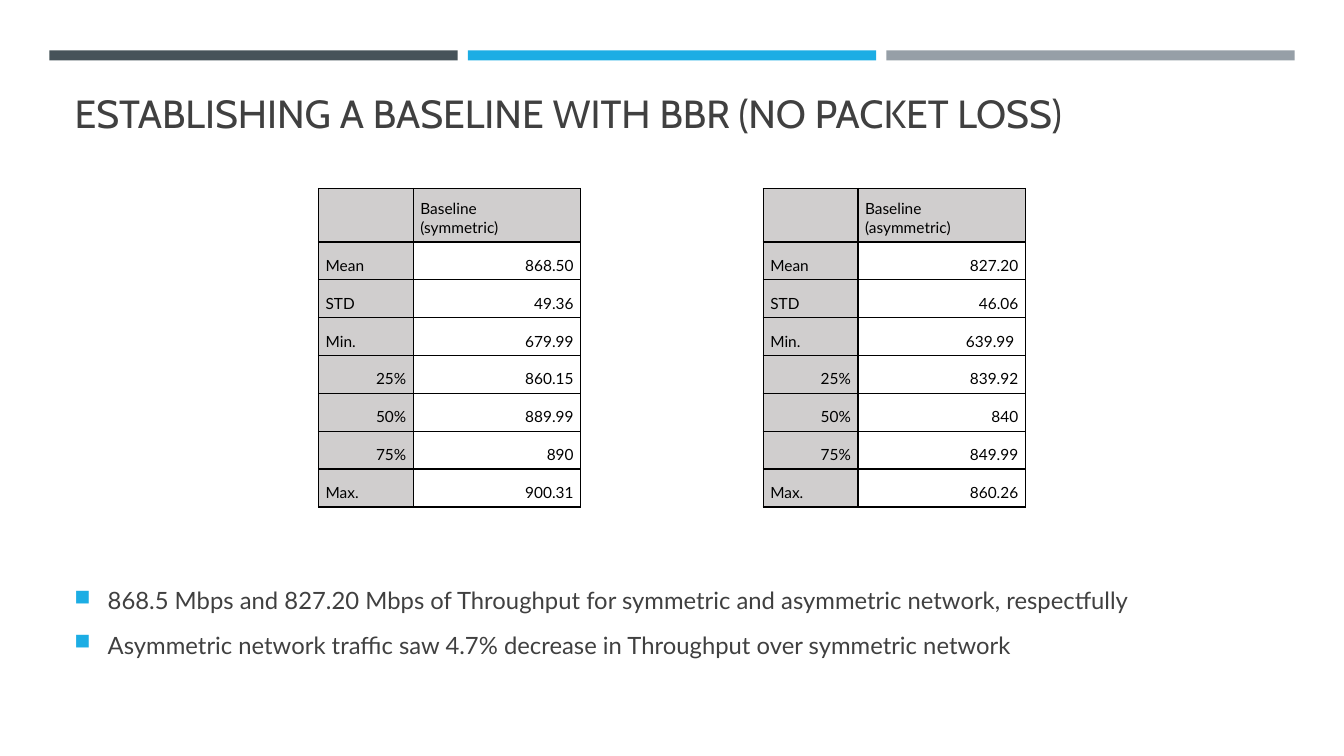
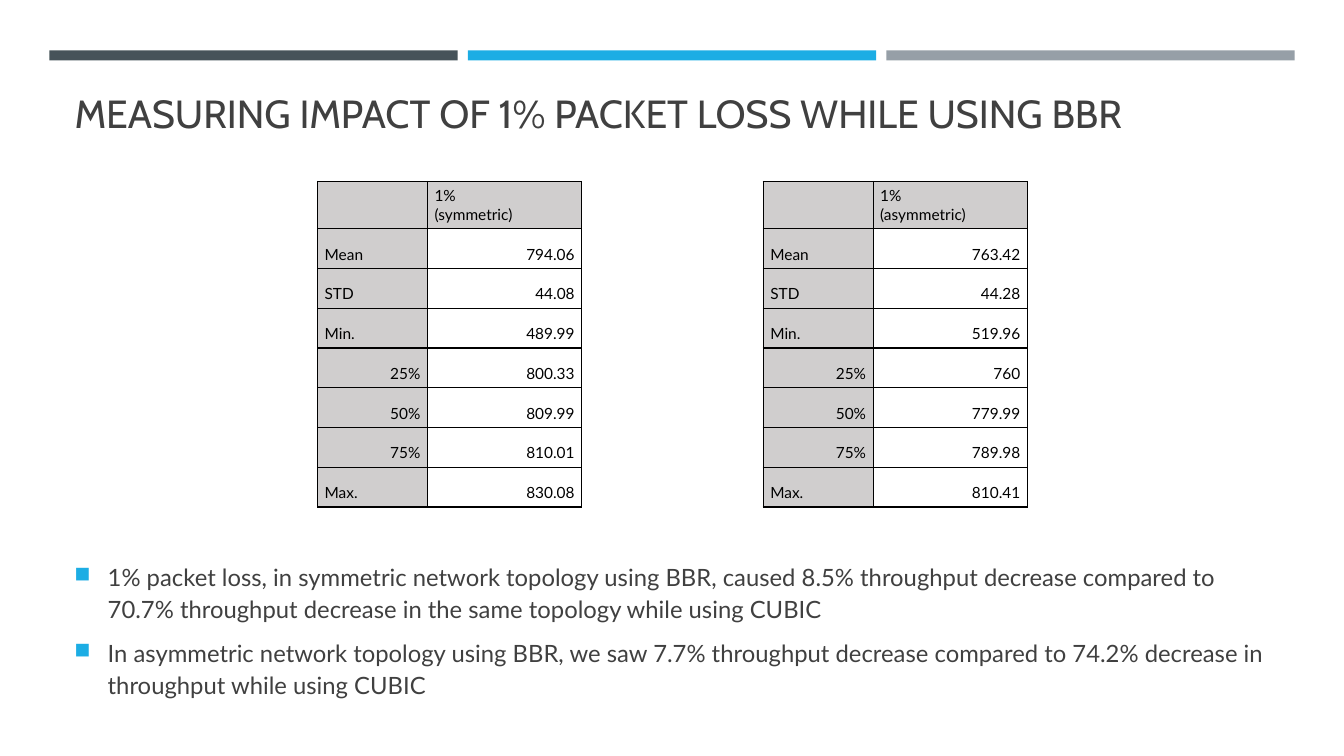
from dataclasses import dataclass
from typing import Any

from lxml import etree
from pptx import Presentation
from pptx.dml.color import RGBColor
from pptx.enum.shapes import MSO_SHAPE
from pptx.enum.text import MSO_ANCHOR, MSO_AUTO_SIZE, PP_ALIGN
from pptx.oxml.ns import qn
from pptx.slide import Slide
from pptx.util import Inches, Pt

RECTANGLE = MSO_SHAPE.RECTANGLE
BOTTOM, MIDDLE = MSO_ANCHOR.BOTTOM, MSO_ANCHOR.MIDDLE
LEFT, RIGHT = PP_ALIGN.LEFT, PP_ALIGN.RIGHT
NO_FIT = MSO_AUTO_SIZE.NONE

COLORS = {
    "slate": "465359",
    "blue": "1CADE4",
    "gray": "969FA7",
    "text": "404040",
    "label": "D0CECE",
    "white": "FFFFFF",
    "black": "000000",
}

# Shared formats
TITLE_FONT = {"name": "Cabin", "size": Pt(28), "bold": False}
BODY_FONT = {"name": "Lato", "size": Pt(17)}
CELL_FONT = {"name": "Lato", "size": Pt(11), "bold": False}
TITLE_FRAME = {"vertical_anchor": BOTTOM, "word_wrap": True, "auto_size": NO_FIT}
BODY_FRAME = {"vertical_anchor": MIDDLE, "word_wrap": True, "auto_size": NO_FIT}
BODY_PARAGRAPH = {"line_spacing": 1.1, "space_before": Pt(3.4), "space_after": Pt(6)}
CELL_FORMAT = {
    "vertical_anchor": BOTTOM,
    "margin_left": Inches(0.07),
    "margin_right": Inches(0.07),
    "margin_top": Inches(0.05),
    "margin_bottom": Inches(0.05),
}
PLAIN_TABLE = {"first_row": False, "horz_banding": False}

# Shared positions, in inches
TEXT_LEFT, TEXT_WIDTH = 0.64, 12.06
BAND_LEFT, BAND_TOP, BAND_WIDTH, BAND_HEIGHT, BAND_GAP = 0.49, 0.5, 4.05, 0.1, 0.1
BANDS = ("slate", "blue", "gray")
ROW_LABELS = ("Mean", "STD", "Min.", "25%", "50%", "75%", "Max.")


@dataclass(frozen=True)
class StatTable:
    left: float
    header: str
    values: tuple[str, ...]


@dataclass(frozen=True)
class TableGrid:
    top: float
    height: float
    header_height: float
    columns: tuple[float, float]


@dataclass(frozen=True)
class ResultSlide:
    title: str
    grid: TableGrid
    tables: tuple[StatTable, ...]
    body_top: float
    body_height: float
    bullets: tuple[str, ...]


SLIDES = (
    ResultSlide(
        "ESTABLISHING A BASELINE WITH BBR (NO PACKET LOSS)",
        TableGrid(1.87, 3.16, 0.53, (0.94, 1.66)),
        (
            StatTable(3.16, "Baseline\n(symmetric)",
                      ("868.50", "49.36", "679.99", "860.15", "889.99", "890", "900.31")),
            StatTable(7.57, "Baseline\n(asymmetric)",
                      ("827.20", "46.06", "639.99 ", "839.92", "840", "849.99", "860.26")),
        ),
        5.58, 1.16,
        (
            "868.5 Mbps and 827.20 Mbps of Throughput for symmetric and asymmetric "
            "network, respectfully",
            "Asymmetric network traffic saw 4.7% decrease in Throughput over symmetric network",
        ),
    ),
    ResultSlide(
        "MEASURING IMPACT OF 1% PACKET LOSS WHILE USING BBR",
        TableGrid(1.8, 3.23, 0.47, (1.09, 1.53)),
        (
            StatTable(3.15, "1%\n(symmetric)",
                      ("794.06", "44.08", "489.99", "800.33", "809.99", "810.01", "830.08")),
            StatTable(7.57, "1%\n(asymmetric)",
                      ("763.42", "44.28", "519.96", "760", "779.99", "789.98", "810.41")),
        ),
        5.47, 1.55,
        (
            "1% packet loss, in symmetric network topology using BBR, caused 8.5% throughput "
            "decrease compared to 70.7% throughput decrease in the same topology while using CUBIC",
            "In asymmetric network topology using BBR, we saw 7.7% throughput decrease compared "
            "to 74.2% decrease in throughput while using CUBIC",
        ),
    ),
)


def color(name: str) -> RGBColor:
    return RGBColor.from_string(COLORS[name])


def apply(target: Any, values: dict[str, Any]) -> None:
    for name, value in values.items():
        setattr(target, name, value)


def style_font(font: Any, values: dict[str, Any], color_name: str) -> None:
    apply(font, values)
    font.color.rgb = color(color_name)


def add_bands(slide: Slide) -> None:
    for index, name in enumerate(BANDS):
        left = BAND_LEFT + index * (BAND_WIDTH + BAND_GAP)
        band = slide.shapes.add_shape(RECTANGLE, Inches(left), Inches(BAND_TOP),
                                      Inches(BAND_WIDTH), Inches(BAND_HEIGHT))
        band.shadow.inherit = False
        band.fill.solid()
        band.fill.fore_color.rgb = color(name)
        band.line.fill.background()


def set_title(slide: Slide, text: str) -> None:
    title = slide.shapes.title
    apply(title, {"left": Inches(TEXT_LEFT), "top": Inches(0.77),
                  "width": Inches(TEXT_WIDTH), "height": Inches(0.63)})
    frame = title.text_frame
    apply(frame, TITLE_FRAME)
    frame.text = text
    para = frame.paragraphs[0]
    para.alignment = LEFT
    style_font(para.runs[0].font, TITLE_FONT, "text")


def add_borders(cell: Any) -> None:
    properties = cell._tc.get_or_add_tcPr()
    for side in ("lnL", "lnR", "lnT", "lnB"):
        line = etree.SubElement(properties, qn(f"a:{side}"), w=str(Pt(1)))
        fill = etree.SubElement(line, qn("a:solidFill"))
        etree.SubElement(fill, qn("a:srgbClr"), val=COLORS["black"])


def fill_cell(cell: Any, text: str, fill_name: str, alignment: PP_ALIGN) -> None:
    add_borders(cell)
    apply(cell, CELL_FORMAT)
    cell.fill.solid()
    cell.fill.fore_color.rgb = color(fill_name)
    cell.text = text
    for para in cell.text_frame.paragraphs:
        para.alignment = alignment
        style_font(para.font, CELL_FONT, "black")
        for span in para.runs:
            style_font(span.font, CELL_FONT, "black")


def add_stat_table(slide: Slide, stats: StatTable, grid: TableGrid) -> None:
    frame = slide.shapes.add_table(len(ROW_LABELS) + 1, 2, Inches(stats.left), Inches(grid.top),
                                   Inches(sum(grid.columns)), Inches(grid.height))
    table = frame.table
    apply(table, PLAIN_TABLE)
    for column, width in zip(table.columns, grid.columns):
        column.width = Inches(width)
    row_height = (grid.height - grid.header_height) / len(ROW_LABELS)
    for index, row in enumerate(table.rows):
        row.height = Inches(row_height if index else grid.header_height)

    # Header row, then one row per statistic
    fill_cell(table.cell(0, 0), "", "label", LEFT)
    fill_cell(table.cell(0, 1), stats.header, "label", LEFT)
    for index, (label, value) in enumerate(zip(ROW_LABELS, stats.values), start=1):
        fill_cell(table.cell(index, 0), label, "label", RIGHT if label.endswith("%") else LEFT)
        fill_cell(table.cell(index, 1), value, "white", RIGHT)


def add_bullet(para: Any) -> None:
    properties = para._p.get_or_add_pPr()
    properties.set("marL", str(Inches(0.33)))
    properties.set("indent", str(Inches(-0.33)))
    bullet_color = etree.SubElement(properties, qn("a:buClr"))
    etree.SubElement(bullet_color, qn("a:srgbClr"), val=COLORS["blue"])
    etree.SubElement(properties, qn("a:buSzPct"), val="92000")
    etree.SubElement(properties, qn("a:buChar"), char="■")


def add_body(slide: Slide, content: ResultSlide) -> None:
    box = slide.shapes.add_textbox(Inches(TEXT_LEFT), Inches(content.body_top),
                                   Inches(TEXT_WIDTH), Inches(content.body_height))
    frame = box.text_frame
    apply(frame, BODY_FRAME)
    frame.text = "\n".join(content.bullets)
    for para in frame.paragraphs:
        apply(para, BODY_PARAGRAPH)
        add_bullet(para)
        style_font(para.runs[0].font, BODY_FONT, "text")


def main() -> None:
    deck = Presentation()
    apply(deck, {"slide_width": Inches(13.33), "slide_height": Inches(7.5)})
    title_only = deck.slide_layouts[5]
    for content in SLIDES:
        slide = deck.slides.add_slide(title_only)
        add_bands(slide)
        set_title(slide, content.title)
        for stats in content.tables:
            add_stat_table(slide, stats, content.grid)
        add_body(slide, content)
    deck.save("out.pptx")


if __name__ == "__main__":
    main()
